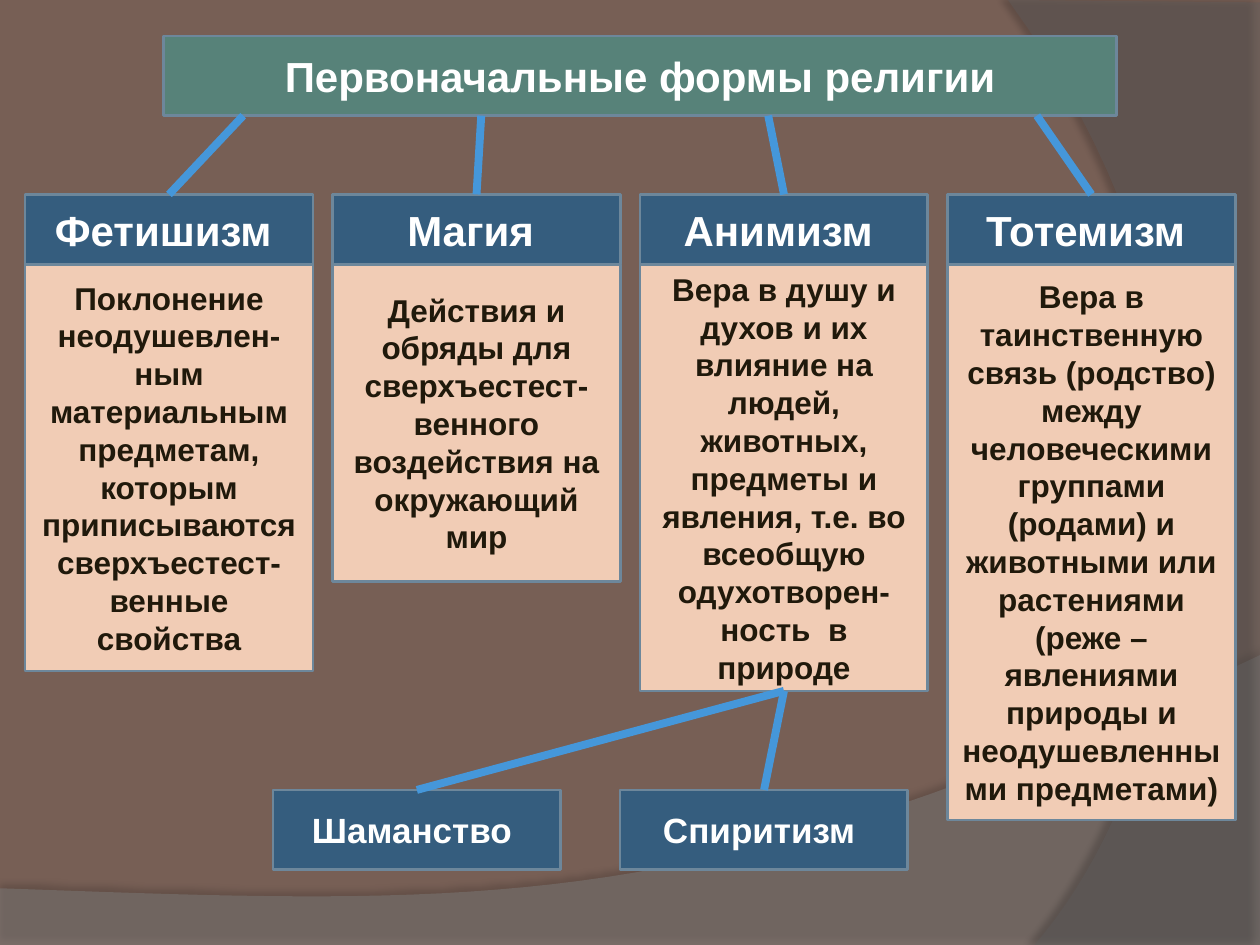
from dataclasses import dataclass

from lxml import etree
from pptx import Presentation
from pptx.dml.color import RGBColor
from pptx.enum.shapes import MSO_CONNECTOR, MSO_SHAPE
from pptx.enum.text import MSO_ANCHOR, PP_ALIGN
from pptx.oxml.ns import qn
from pptx.util import Pt

RECT = MSO_SHAPE.RECTANGLE
STRAIGHT = MSO_CONNECTOR.STRAIGHT
MIDDLE = MSO_ANCHOR.MIDDLE
CENTER = PP_ALIGN.CENTER
TOP, BOTTOM = 0, 2


@dataclass(frozen=True)
class Theme:
    font: str = "Arial"
    background: str = "775F55"
    wave: str = "7F7F7F"
    arc: str = "5E5E5E"
    shadow: str = "000000"
    title: str = "578279"
    header: str = "355D7E"
    body: str = "F1CCB5"
    border: str = "6D879B"
    link: str = "4597DA"
    light: str = "FFFFFF"
    dark: str = "20190B"
    heading_size: float = 24
    sub_size: float = 20
    body_size: float = 18
    border_width: float = 1.5
    link_width: float = 4.5


THEME = Theme()

TITLE = "Первоначальные формы религии"
TITLE_BOX = (93.6, 20.7, 544.3, 45.4)
LINK_STARTS = (139, 275, 439, 592.5)

FORMS = [
    ("Фетишизм ", "Поклонение неодушевлен-ным материальным предметам, которым "
     "приписываются сверхъестест-венные свойства", 232.5),
    ("Магия ", "Действия и обряды для сверхъестест-венного воздействия "
     "на окружающий мир", 181.4),
    ("Анимизм ", "Вера в душу и духов и их влияние на людей, животных, предметы "
     "и явления, т.е. во всеобщую одухотворен-ность  в природе", 243.8),
    ("Тотемизм ", "Вера в таинственную связь (родство) между человеческими "
     "группами (родами) и животными или растениями (реже – явлениями природы "
     "и неодушевленными предметами)", 317.5),
]
ANIMISM = 2
COLUMNS_LEFT, COLUMNS_TOP = 14.4, 111.1
COLUMN_WIDTH, COLUMN_PITCH, HEADER_HEIGHT = 164.4, 175.7, 39.9

SUBFORMS = [("Шаманство ", 156), ("Спиритизм ", 354.4)]
SUBFORM_TOP, SUBFORM_HEIGHT = 451.4, 45.4


def rgb(color):
    return RGBColor.from_string(color)


def add_text(s, text, *, size, color, bold=True):
    tf = s.text_frame
    tf.word_wrap = True
    tf.vertical_anchor = MIDDLE
    p = tf.paragraphs[0]
    p.alignment = CENTER
    r = p.add_run()
    r.text = text
    r.font.name = THEME.font
    r.font.size = Pt(size)
    r.font.bold = bold
    r.font.color.rgb = rgb(color)


def add_box(slide, box, fill, text, **text_format):
    s = slide.shapes.add_shape(RECT, *(Pt(v) for v in box))
    s.shadow.inherit = False
    s.fill.solid()
    s.fill.fore_color.rgb = rgb(fill)
    s.line.color.rgb = rgb(THEME.border)
    s.line.width = Pt(THEME.border_width)
    add_text(s, text, **text_format)
    return s


def add_link(slide, start, end_shape):
    """Join a point, or the bottom of a shape, to the top of end_shape."""
    is_point = isinstance(start, tuple)
    x, y = (Pt(v) for v in start) if is_point else (0, 0)
    c = slide.shapes.add_connector(STRAIGHT, x, y, x, y)
    if not is_point:
        c.begin_connect(start, BOTTOM)
    c.end_connect(end_shape, TOP)
    c.line.color.rgb = rgb(THEME.link)
    c.line.width = Pt(THEME.link_width)
    etree.SubElement(c._element.spPr, qn("a:effectLst"))


def bezier(p0, p1, p2, p3, steps=40):
    """Points along a cubic curve, both ends included."""
    points = []
    for i in range(steps + 1):
        t = i / steps
        u = 1 - t
        weights = (u ** 3, 3 * u * u * t, 3 * u * t * t, t ** 3)
        points.append(tuple(sum(w * q[axis] for w, q in zip(weights, (p0, p1, p2, p3)))
                            for axis in (0, 1)))
    return points


def add_backdrop(slide, points, color, opacity, shadow_opacity, distance, direction):
    """Add a translucent outline that casts a soft shadow."""
    first, *rest = [(Pt(x), Pt(y)) for x, y in points]
    builder = slide.shapes.build_freeform(*first)
    builder.add_line_segments(rest, close=True)
    s = builder.convert_to_shape()
    s.line.fill.background()
    s.fill.solid()
    s.fill.fore_color.rgb = rgb(color)
    spPr = s._element.spPr
    fill_color = spPr.find(qn("a:solidFill")).find(qn("a:srgbClr"))
    etree.SubElement(fill_color, qn("a:alpha"), val=str(opacity * 1000))
    effects = etree.SubElement(spPr, qn("a:effectLst"))
    shadow = etree.SubElement(effects, qn("a:outerShdw"), blurRad=str(Pt(4)),
                              dist=str(Pt(distance)), dir=str(direction * 60000),
                              rotWithShape="0")
    shadow_color = etree.SubElement(shadow, qn("a:srgbClr"), val=THEME.shadow)
    etree.SubElement(shadow_color, qn("a:alpha"), val=str(shadow_opacity * 1000))


def add_background(slide, width, height):
    fill = slide.background.fill
    fill.solid()
    fill.fore_color.rgb = rgb(THEME.background)
    wave = bezier((width, 374.4), (402.5, 524.9), (281.5, 517.7), (0, 507.6))
    add_backdrop(slide, [(0, height), (width, height)] + wave,
                 THEME.wave, 45, 35, 3.5, 270)
    arc = bezier((591.1, height), (673.2, 445.7), (733, 216), (576, 0))
    add_backdrop(slide, [(width, 1.4), (width, height)] + arc,
                 THEME.arc, 40, 45, 4, 180)


def add_form(slide, box, name, description):
    """Stack a header on its description and return both."""
    x, y, w, h = box
    body = add_box(slide, (x, y + HEADER_HEIGHT, w, h - HEADER_HEIGHT), THEME.body,
                   description, size=THEME.body_size, color=THEME.dark)
    header = add_box(slide, (x, y, w, HEADER_HEIGHT), THEME.header, name,
                     size=THEME.heading_size, color=THEME.light)
    return header, body


def main():
    prs = Presentation()
    prs.slide_width, prs.slide_height = Pt(720), Pt(540)
    slide = prs.slides.add_slide(prs.slide_layouts[6])
    add_background(slide, 720, 540)

    add_box(slide, TITLE_BOX, THEME.title, TITLE,
            size=THEME.heading_size, color=THEME.light)
    forms = [add_form(slide, (COLUMNS_LEFT + i * COLUMN_PITCH, COLUMNS_TOP,
                              COLUMN_WIDTH, HEADER_HEIGHT + body_height), name, text)
             for i, (name, text, body_height) in enumerate(FORMS)]
    subforms = [add_box(slide, (x, SUBFORM_TOP, COLUMN_WIDTH, SUBFORM_HEIGHT),
                        THEME.header, name, size=THEME.sub_size, color=THEME.light)
                for name, x in SUBFORMS]

    title_bottom = TITLE_BOX[1] + TITLE_BOX[3]
    for x, (header, _) in zip(LINK_STARTS, forms):
        add_link(slide, (x, title_bottom), header)
    for subform in subforms:
        add_link(slide, forms[ANIMISM][1], subform)

    prs.save("out.pptx")


if __name__ == "__main__":
    main()
